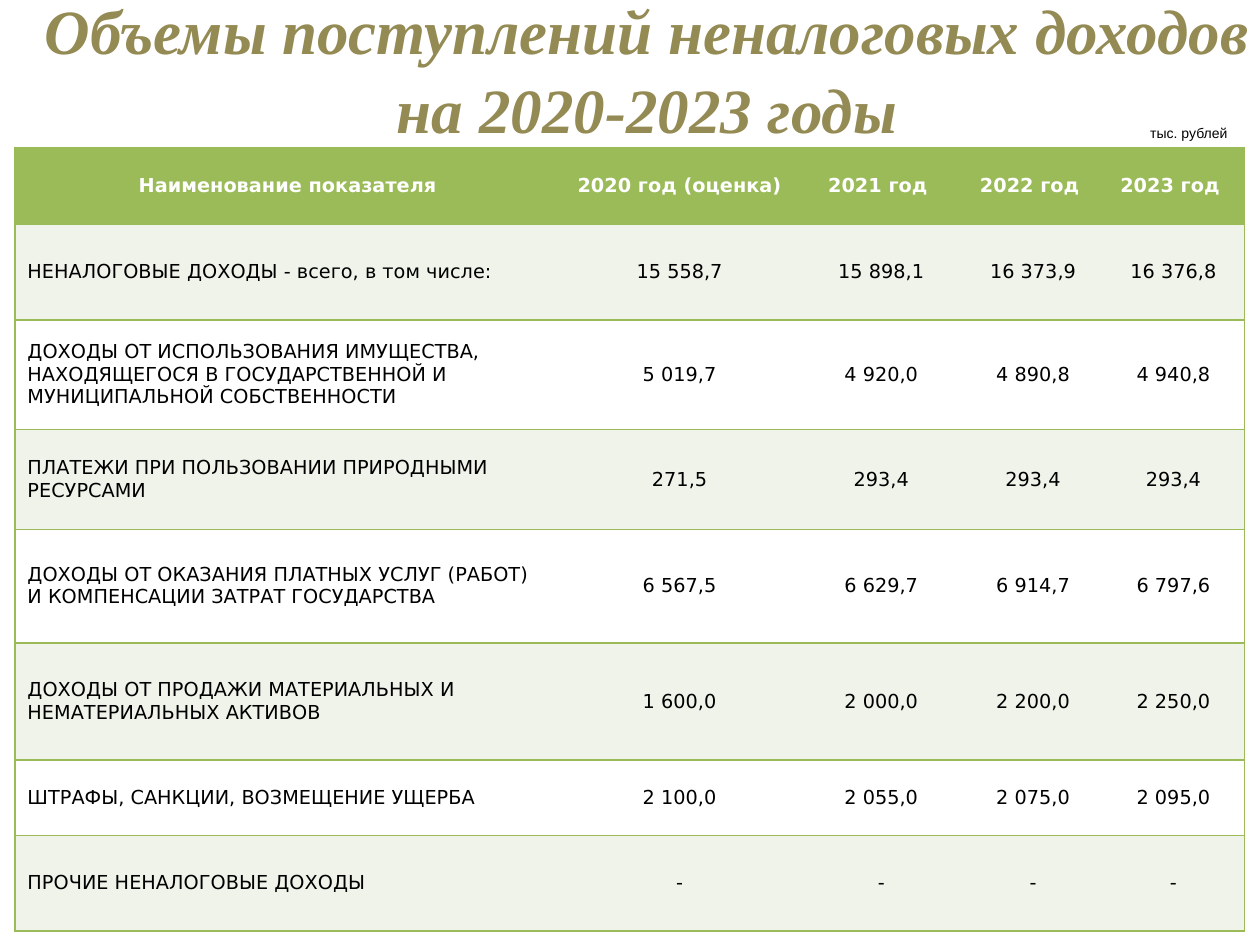
"""Build the slide on non-tax revenue volumes for 2020-2023."""
from lxml.etree import SubElement
from pptx import Presentation
from pptx.dml.color import RGBColor
from pptx.enum.text import MSO_ANCHOR as Anchor, MSO_AUTO_SIZE as AutoSize, PP_ALIGN as Align
from pptx.oxml.ns import qn
from pptx.util import Cm, Pt

GREEN = RGBColor(0x9B, 0xBB, 0x59)
PALE_GREEN = RGBColor(0xEF, 0xF3, 0xEA)
WHITE = RGBColor(0xFF, 0xFF, 0xFF)
BLACK = RGBColor(0x00, 0x00, 0x00)
OLIVE = RGBColor(0x94, 0x8A, 0x54)

HEADING_FORMAT = {"name": "Times New Roman", "size": Pt(36), "bold": True, "italic": True}
UNITS_FORMAT = {"name": "Arial", "size": Pt(8)}
HEADER_FORMAT = {"name": "DejaVu Sans", "size": Pt(11), "bold": True}
BODY_FORMAT = {**HEADER_FORMAT, "bold": False}
NO_STYLE = "{2D5ABB26-0587-4C30-8999-92F81FD0307C}"

COLUMN_WIDTHS = [11, 4.8, 3.33, 2.79, 2.87]
ROW_HEIGHTS = [1.55, 1.93, 2.21, 2.01, 2.29, 2.36, 1.52, 1.93]
REVENUES = [
    ["Наименование показателя", "2020 год (оценка)", "2021 год ", "2022 год ", "2023 год "],
    ["НЕНАЛОГОВЫЕ ДОХОДЫ - всего, в том числе:",
     "15 558,7", "15 898,1", "16 373,9", "16 376,8"],
    ["ДОХОДЫ ОТ ИСПОЛЬЗОВАНИЯ ИМУЩЕСТВА, НАХОДЯЩЕГОСЯ В ГОСУДАРСТВЕННОЙ И "
     "МУНИЦИПАЛЬНОЙ СОБСТВЕННОСТИ", "5 019,7", "4 920,0", "4 890,8", "4 940,8"],
    ["ПЛАТЕЖИ ПРИ ПОЛЬЗОВАНИИ ПРИРОДНЫМИ РЕСУРСАМИ", "271,5", "293,4", "293,4", "293,4"],
    ["ДОХОДЫ ОТ ОКАЗАНИЯ ПЛАТНЫХ УСЛУГ (РАБОТ) И КОМПЕНСАЦИИ ЗАТРАТ ГОСУДАРСТВА",
     "6 567,5", "6 629,7", "6 914,7", "6 797,6"],
    ["ДОХОДЫ ОТ ПРОДАЖИ МАТЕРИАЛЬНЫХ И НЕМАТЕРИАЛЬНЫХ АКТИВОВ",
     "1 600,0", "2 000,0", "2 200,0", "2 250,0"],
    ["ШТРАФЫ, САНКЦИИ, ВОЗМЕЩЕНИЕ УЩЕРБА", "2 100,0", "2 055,0", "2 075,0", "2 095,0"],
    ["ПРОЧИЕ НЕНАЛОГОВЫЕ ДОХОДЫ", "-", "-", "-", "-"],
]


def write(frame, text, align, color, formats):
    paragraph = frame.paragraphs[0]
    paragraph.alignment = align
    run = paragraph.add_run()
    run.text = text
    run.font.color.rgb = color
    for attribute, value in formats.items():
        setattr(run.font, attribute, value)
    return paragraph


def draw_borders(cell, sides):
    properties = cell._tc.get_or_add_tcPr()
    for position, side in enumerate(sides):
        line = SubElement(properties, qn(f"a:ln{side}"), w=str(Pt(1)))
        fill = SubElement(line, qn("a:solidFill"))
        SubElement(fill, qn("a:srgbClr"), val=str(GREEN))
        properties.insert(position, line)


presentation = Presentation()
presentation.slide_width, presentation.slide_height = Cm(25.4), Cm(19.05)
slide = presentation.slides.add_slide(presentation.slide_layouts[5])

heading = slide.shapes.title
heading.left, heading.top, heading.width, heading.height = Cm(-1.5), Cm(0.57), Cm(27.1), Cm(1.57)
heading.text_frame.auto_size = AutoSize.NONE
heading.text_frame.vertical_anchor = Anchor.MIDDLE
heading_line = write(heading.text_frame, "Объемы поступлений неналоговых доходов на 2020-2023 годы",
                     Align.CENTER, OLIVE, HEADING_FORMAT)
heading_line.line_spacing = 1.05
heading_line._p.get_or_add_pPr().set("marL", str(Cm(1.98)))

revenue_frame = slide.shapes.add_table(
    len(ROW_HEIGHTS), len(COLUMN_WIDTHS), Cm(0.3), Cm(2.97),
    Cm(sum(COLUMN_WIDTHS)), Cm(sum(ROW_HEIGHTS)))
revenue = revenue_frame.table
revenue._tbl.tblPr.find(qn("a:tableStyleId")).text = NO_STYLE
for column, width in zip(revenue.columns, COLUMN_WIDTHS):
    column.width = Cm(width)

last_column = len(COLUMN_WIDTHS) - 1
for r, (row, height) in enumerate(zip(REVENUES, ROW_HEIGHTS)):
    revenue.rows[r].height = Cm(height)
    is_header = r == 0
    band = GREEN if is_header else PALE_GREEN if r % 2 else WHITE
    for c, entry in enumerate(row):
        cell = revenue.cell(r, c)
        cell.vertical_anchor = Anchor.MIDDLE
        cell.fill.solid()
        cell.fill.fore_color.rgb = band
        write(cell.text_frame, entry,
              Align.CENTER if is_header or c else Align.LEFT,
              WHITE if is_header else BLACK,
              HEADER_FORMAT if is_header else BODY_FORMAT)
        draw_borders(cell, {0: "LTB", last_column: "RTB"}.get(c, "TB"))

units = slide.shapes.add_textbox(Cm(22.89), Cm(2.39), Cm(2.11), Cm(0.6)).text_frame
units.word_wrap = False
units.auto_size = AutoSize.SHAPE_TO_FIT_TEXT
write(units, "тыс. рублей", Align.RIGHT, BLACK, UNITS_FORMAT)

presentation.save("out.pptx")
